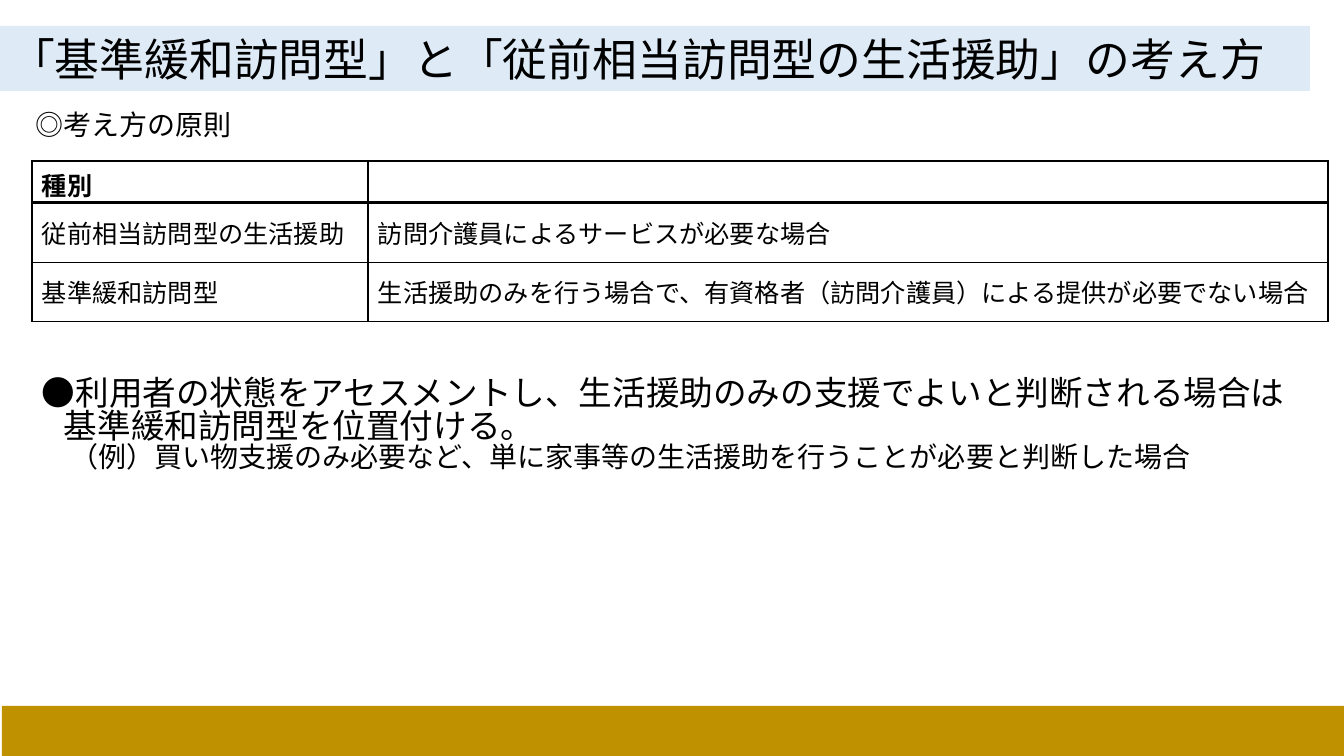
from dataclasses import dataclass

from lxml import etree
from pptx import Presentation
from pptx import util as u
from pptx.dml.color import RGBColor
from pptx.enum import shapes, text
from pptx.oxml import ns

PX = 914400 / 100.8


def px(length):
    return u.Emu(round(length * PX))


@dataclass(frozen=True)
class Theme:
    font: str = "Noto Sans CJK JP"
    ink: str = "000000"
    heading_band: str = "DEEBF7"
    footer_band: str = "BF9000"
    title_size: int = 32
    lead_size: int = 24
    note_size: int = 20
    table_size: int = 18
    thin: int = 1
    thick: int = 3


class SlideBuilder:
    def __init__(self, slide, theme):
        self.slide = slide
        self.theme = theme

    def place(self, shape, left, top, width, height):
        shape.left, shape.top = px(left), px(top)
        shape.width, shape.height = px(width), px(height)

    def fill(self, shape, color):
        shape.fill.solid()
        shape.fill.fore_color.rgb = RGBColor.from_string(color)

    def style(self, paragraph, size, bold=False, spacing=1.0):
        paragraph.alignment = text.PP_ALIGN.LEFT
        paragraph.line_spacing = spacing
        paragraph.space_before = u.Pt(0)
        font = paragraph.font
        font.size, font.bold = u.Pt(size), bold
        font.color.rgb = RGBColor.from_string(self.theme.ink)
        font.name = self.theme.font
        defaults = paragraph._p.pPr.find(ns.qn("a:defRPr"))
        etree.SubElement(defaults, ns.qn("a:ea"), typeface=self.theme.font)

    def frame(self, shape, anchor):
        frame = shape.text_frame
        frame.word_wrap = True
        frame.auto_size = text.MSO_AUTO_SIZE.NONE
        frame.vertical_anchor = anchor
        frame.margin_left = frame.margin_right = px(10)
        frame.margin_top = frame.margin_bottom = 0
        return frame

    def title(self, wording, *box):
        heading = self.slide.shapes.title
        self.place(heading, *box)
        self.fill(heading, self.theme.heading_band)
        frame = self.frame(heading, text.MSO_ANCHOR.MIDDLE)
        frame.text = wording
        self.style(frame.paragraphs[0], self.theme.title_size)

    def label(self, wording, *box):
        label = self.slide.shapes.add_textbox(*map(px, box))
        frame = self.frame(label, text.MSO_ANCHOR.TOP)
        frame.text = wording
        self.style(frame.paragraphs[0], self.theme.note_size)

    def body(self, lines, *box):
        body = self.slide.placeholders[1]
        self.place(body, *box)
        frame = self.frame(body, text.MSO_ANCHOR.TOP)
        frame.text = "\n".join(wording for wording, _, _ in lines)
        for paragraph, (_, size, indent) in zip(frame.paragraphs, lines):
            self.style(paragraph, size, spacing=0.82)
            properties = paragraph._p.pPr
            properties.set("marL", str(px(indent)))
            properties.set("indent", "0")
            no_bullet = etree.Element(ns.qn("a:buNone"))
            properties.find(ns.qn("a:defRPr")).addprevious(no_bullet)

    def borders(self, cell, widths):
        properties = cell._tc.get_or_add_tcPr()
        for index, (side, width) in enumerate(widths.items()):
            line = etree.Element(ns.qn(f"a:ln{side}"), w=str(u.Pt(width)))
            fill = etree.SubElement(line, ns.qn("a:solidFill"))
            etree.SubElement(fill, ns.qn("a:srgbClr"), val=self.theme.ink)
            properties.insert(index, line)

    def table(self, rows, widths, heights, left, top):
        box = map(px, (left, top, sum(widths), sum(heights)))
        table = self.slide.shapes.add_table(len(rows), len(widths), *box).table
        table.horz_banding = table.first_row = False
        for column, width in zip(table.columns, widths):
            column.width = px(width)
        for row_index, (row, height) in enumerate(zip(rows, heights)):
            table.rows[row_index].height = px(height)
            header = row_index == 0
            thin, thick = self.theme.thin, self.theme.thick
            edges = {
                "L": thin,
                "R": thin,
                "T": thick if row_index == 1 else thin,
                "B": thick if header else thin,
            }
            for column_index, wording in enumerate(row):
                cell = table.cell(row_index, column_index)
                cell.text = wording
                cell.fill.background()
                cell.margin_left = cell.margin_right = px(10)
                cell.margin_top = px(5)
                cell.margin_bottom = 0 if header else px(5)
                cell.vertical_anchor = (
                    text.MSO_ANCHOR.TOP if header else text.MSO_ANCHOR.MIDDLE
                )
                self.style(cell.text_frame.paragraphs[0], self.theme.table_size, header)
                self.borders(cell, edges)

    def band(self, color, *box):
        band = self.slide.shapes.add_shape(shapes.MSO_SHAPE.RECTANGLE, *map(px, box))
        band.shadow.inherit = False
        self.fill(band, color)
        band.line.fill.background()


def main():
    deck = Presentation()
    deck.slide_width, deck.slide_height = px(1344), px(756)
    theme = Theme()
    page = SlideBuilder(deck.slides.add_slide(deck.slide_layouts[1]), theme)

    page.title("「基準緩和訪問型」と「従前相当訪問型の生活援助」の考え方", 0, 26, 1310, 65)
    page.label("◎考え方の原則", 25, 107, 291, 44)
    service_rules = [
        ("種別", ""),
        ("従前相当訪問型の生活援助", "訪問介護員によるサービスが必要な場合"),
        (
            "基準緩和訪問型",
            "生活援助のみを行う場合で、有資格者（訪問介護員）による提供が必要でない場合",
        ),
    ]
    page.table(service_rules, (336, 960), (41, 60, 59), 32, 161)
    guidance = [
        (
            "●利用者の状態をアセスメントし、生活援助のみの支援でよいと判断される場合は",
            theme.lead_size,
            0,
        ),
        ("基準緩和訪問型を位置付ける。", theme.lead_size, 22),
        (
            "（例）買い物支援のみ必要など、単に家事等の生活援助を行うことが必要と判断した場合",
            theme.note_size,
            28,
        ),
    ]
    page.body(guidance, 32, 379, 1284, 216)
    page.band(theme.footer_band, 2, 706, 1342, 50)
    deck.save("out.pptx")


if __name__ == "__main__":
    main()
